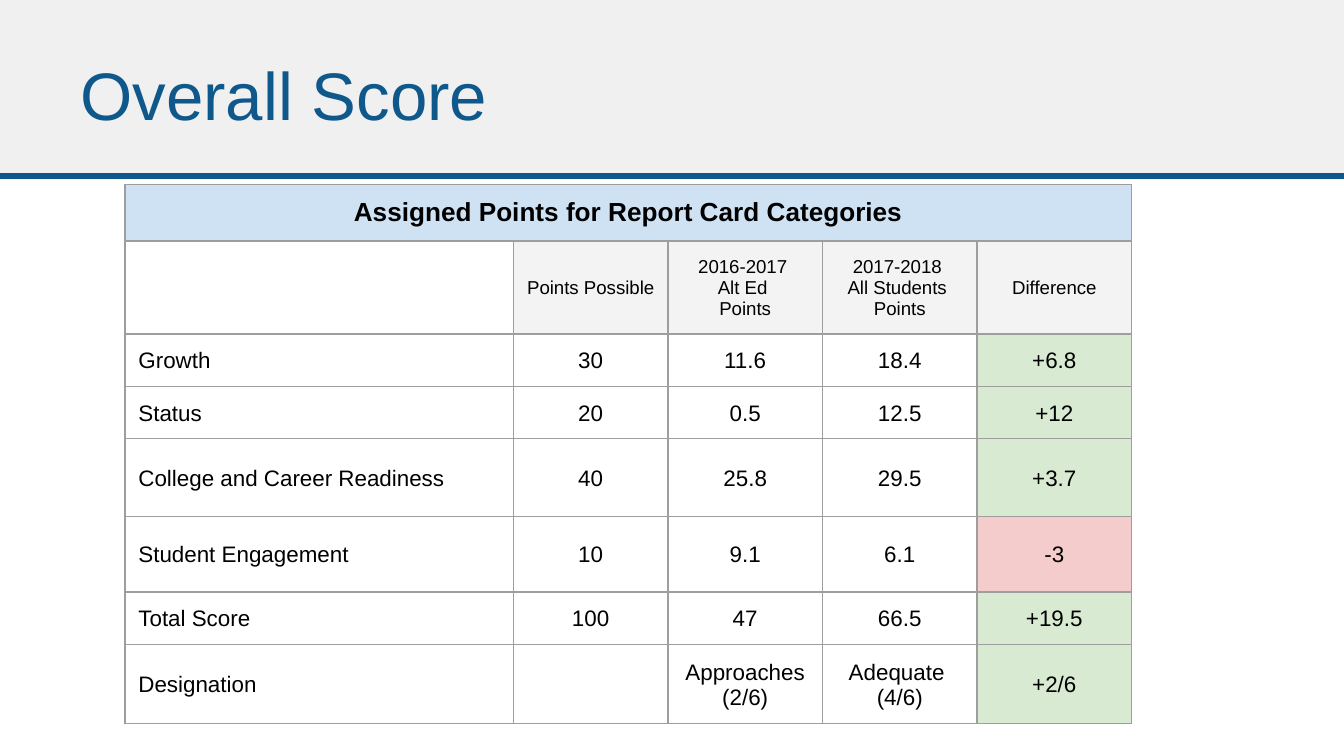
from dataclasses import dataclass

import lxml.etree
import pptx
import pptx.dml.color
import pptx.enum.shapes
import pptx.enum.text
import pptx.oxml.ns
import pptx.util

Inches = pptx.util.Inches
Pt = pptx.util.Pt
qn = pptx.oxml.ns.qn
ALIGN = pptx.enum.text.PP_ALIGN
ANCHOR = pptx.enum.text.MSO_ANCHOR


@dataclass(frozen=True)
class Theme:
    font: str = "Arial"
    accent: str = "0F588B"
    band: str = "F0F0F0"
    text: str = "000000"
    border: str = "9E9E9E"
    caption: str = "CFE2F3"
    header: str = "F3F3F3"
    gain: str = "D9EAD3"
    loss: str = "F4CCCC"
    title_size: int = 36
    caption_size: int = 14
    header_size: int = 10
    body_size: int = 12


THEME = Theme()
CAPTION = "Assigned Points for Report Card Categories"
HEADERS = ["", "Points Possible", "2016-2017 \nAlt Ed \nPoints",
           "2017-2018 \nAll Students \nPoints", "Difference"]
SCORES = [
    ["Growth", "30", "11.6", "18.4", "+6.8"],
    ["Status", "20", "0.5", "12.5", "+12"],
    ["College and Career Readiness", "40", "25.8", "29.5", "+3.7"],
    ["Student Engagement", "10", "9.1", "6.1", "-3"],
    ["Total Score", "100", "47", "66.5", "+19.5"],
    ["Designation", "", "Approaches (2/6)", "Adequate \n(4/6)", "+2/6"],
]
COL_WIDTHS = [2.89] + [1.15] * 4
ROW_HEIGHTS = [0.42, 0.68, 0.39, 0.39, 0.58, 0.56, 0.39, 0.58]


def rgb(color):
    return pptx.dml.color.RGBColor.from_string(color)


def write(tf, text, size=THEME.body_size, color=THEME.text, bold=False, align=ALIGN.LEFT):
    p = tf.paragraphs[0]
    p.alignment = align
    p.font.size = Pt(size)
    for i, line in enumerate(text.split("\n") if text else []):
        if i:
            p.add_line_break()
        r = p.add_run()
        r.text = line
        r.font.name = THEME.font
        r.font.size = Pt(size)
        r.font.bold = bold
        r.font.color.rgb = rgb(color)


def set_margins(box, bottom=0.1):
    box.margin_left = box.margin_right = box.margin_top = Inches(0.1)
    box.margin_bottom = Inches(bottom)


def add_band(s):
    sp = s.shapes.add_shape(pptx.enum.shapes.MSO_SHAPE.RECTANGLE, 0, 0, Inches(10), Inches(1.31))
    sp.shadow.inherit = False
    sp.fill.solid()
    sp.fill.fore_color.rgb = rgb(THEME.band)
    sp.line.fill.background()


def add_rule(s):
    y = Inches(1.31)
    line = s.shapes.add_connector(pptx.enum.shapes.MSO_CONNECTOR.STRAIGHT, 0, y, Inches(10), y)
    line.line.color.rgb = rgb(THEME.accent)
    line.line.width = Pt(3)
    lxml.etree.SubElement(line._element.spPr, qn("a:effectLst"))


def add_title(s, text):
    sp = s.shapes.add_textbox(Inches(0.5), Inches(0.23), Inches(7.67), Inches(0.94))
    tf = sp.text_frame
    tf.word_wrap = True
    tf.vertical_anchor = ANCHOR.MIDDLE
    set_margins(tf)
    write(tf, text, size=THEME.title_size, color=THEME.accent)


def add_borders(cell):
    tc_pr = cell._tc.get_or_add_tcPr()
    for side in ("a:lnL", "a:lnR", "a:lnT", "a:lnB"):
        ln = lxml.etree.SubElement(tc_pr, qn(side), w=str(Pt(0.75)))
        fill = lxml.etree.SubElement(ln, qn("a:solidFill"))
        lxml.etree.SubElement(fill, qn("a:srgbClr"), val=THEME.border)


def fill_cell(cell, text, fill=None, anchor=ANCHOR.MIDDLE, **fmt):
    set_margins(cell, bottom=0.09)
    cell.vertical_anchor = anchor
    if fill:
        cell.fill.solid()
        cell.fill.fore_color.rgb = rgb(fill)
    else:
        cell.fill.background()
    write(cell.text_frame, text, **fmt)


def add_score_table(s):
    table = s.shapes.add_table(
        len(ROW_HEIGHTS), len(COL_WIDTHS), Inches(0.93), Inches(1.37),
        Inches(sum(COL_WIDTHS)), Inches(sum(ROW_HEIGHTS))).table
    table.first_row = table.horz_banding = False
    for col, width in zip(table.columns, COL_WIDTHS):
        col.width = Inches(width)
    for row, height in zip(table.rows, ROW_HEIGHTS):
        row.height = Inches(height)
    for cell in table.iter_cells():
        add_borders(cell)

    table.cell(0, 0).merge(table.cell(0, len(COL_WIDTHS) - 1))
    fill_cell(table.cell(0, 0), CAPTION, fill=THEME.caption, anchor=ANCHOR.TOP,
              size=THEME.caption_size, bold=True, align=ALIGN.CENTER)
    for c, text in enumerate(HEADERS):
        fill_cell(table.cell(1, c), text, fill=THEME.header if text else None,
                  size=THEME.header_size, align=ALIGN.CENTER)
    for r, (label, *points, change) in enumerate(SCORES, start=2):
        fill_cell(table.cell(r, 0), label)
        for c, text in enumerate(points, start=1):
            fill_cell(table.cell(r, c), text, align=ALIGN.CENTER)
        fill_cell(table.cell(r, len(COL_WIDTHS) - 1), change, align=ALIGN.CENTER,
                  fill=THEME.loss if change.startswith("-") else THEME.gain)


def main():
    prs = pptx.Presentation()
    prs.slide_width = Inches(10)
    prs.slide_height = prs.slide_width * 9 // 16
    s = prs.slides.add_slide(prs.slide_layouts[6])
    add_band(s)
    add_rule(s)
    add_title(s, "Overall Score")
    add_score_table(s)
    prs.save("out.pptx")


if __name__ == "__main__":
    main()
